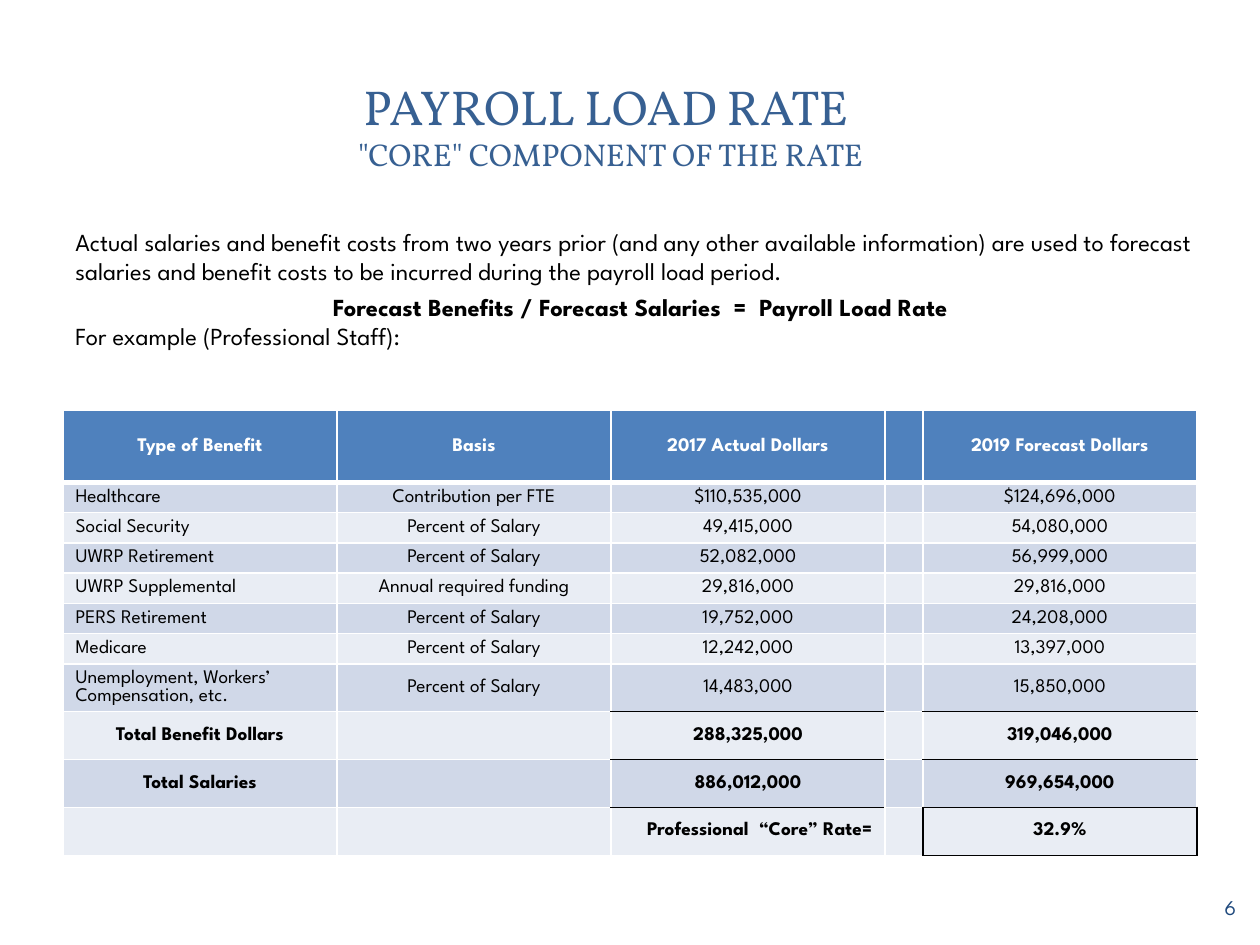
from dataclasses import dataclass

import lxml.etree
import pptx
import pptx.dml.color
import pptx.enum.shapes
import pptx.enum.text
import pptx.oxml.ns
import pptx.util

Align = pptx.enum.text.PP_ALIGN
Anchor = pptx.enum.text.MSO_ANCHOR
Shape = pptx.enum.shapes.MSO_SHAPE

WIDTH, HEIGHT = 10, 7.5
BODY_FONT, TITLE_FONT = "League Spartan", "Vollkorn"
COLORS = {
    "title": "376092", "number": "1F497D", "text": "000000", "white": "FFFFFF",
    "header": "4F81BD", "odd": "D0D8E8", "even": "E9EDF4", "rule": "000000",
}
TABLE_LEFT, TABLE_TOP, TABLE_WIDTH = 0.5, 3.26, 9
GAP_WIDTH = 0.3
HEADER_HEIGHT, ROW_HEIGHT, TALL_HEIGHT = 0.57, 0.24, 0.38
CELL_SIZE = 11
GAP_COLUMN = 3
SIDES = {"lnL": (0, -1), "lnR": (0, 1), "lnT": (-1, 0), "lnB": (1, 0)}


@dataclass
class Panel:
    kind: Shape
    left: float
    top: float
    width: float
    height: float
    opacity: int = 100


@dataclass
class Line:
    text: str
    size: float
    color: str = "text"
    font: str = BODY_FONT
    bold: bool = False
    align: Align = Align.LEFT
    before: float = 0


@dataclass
class Benefit:
    label: str
    basis: str
    actual: str
    forecast: str
    height: float = ROW_HEIGHT
    bold: bool = False

    def texts(self) -> list[str]:
        return [self.label, self.basis, self.actual, "", self.forecast]


PANELS = [
    Panel(Shape.ROUNDED_RECTANGLE, 0.1, 0.11, 9.8, 7.29),
    Panel(Shape.RECTANGLE, 0.3, 0.3, 9.4, 1.45, 83),
    Panel(Shape.RECTANGLE, 0.41, 0.41, 9.17, 1.22),
]
PERCENT = "Percent of Salary"
ROWS = [
    Benefit("Type of Benefit", "Basis", "2017 Actual Dollars", "2019 Forecast Dollars", HEADER_HEIGHT, True),
    Benefit("Healthcare", "Contribution per FTE", "$110,535,000", "$124,696,000"),
    Benefit("Social Security", PERCENT, "49,415,000", "54,080,000"),
    Benefit("UWRP Retirement", PERCENT, "52,082,000", "56,999,000"),
    Benefit("UWRP Supplemental", "Annual required funding", "29,816,000", "29,816,000"),
    Benefit("PERS Retirement", PERCENT, "19,752,000", "24,208,000"),
    Benefit("Medicare", PERCENT, "12,242,000", "13,397,000"),
    Benefit("Unemployment, Workers’ Compensation, etc.", PERCENT, "14,483,000", "15,850,000", TALL_HEIGHT),
    Benefit("Total Benefit Dollars", "", "288,325,000", "319,046,000", TALL_HEIGHT, True),
    Benefit("Total Salaries", "", "886,012,000", "969,654,000", TALL_HEIGHT, True),
    Benefit("", "", "Professional  “Core” Rate=", "32.9%", TALL_HEIGHT, True),
]
LAST_CELL = (len(ROWS) - 1, 4)
RULED_EDGES = {
    frozenset({(row, column), (row + 1, column)}) for row in (7, 8, 9) for column in (2, 4)
} | {
    frozenset({LAST_CELL, (LAST_CELL[0] + down, LAST_CELL[1] + across)})
    for down, across in SIDES.values()
}


def rgb(name: str) -> pptx.dml.color.RGBColor:
    return pptx.dml.color.RGBColor.from_string(COLORS[name])


def add_panel(page, panel: Panel) -> None:
    shape = page.shapes.add_shape(
        panel.kind, *map(pptx.util.Inches, (panel.left, panel.top, panel.width, panel.height)))
    shape.shadow.inherit = False
    shape.line.fill.background()
    shape.fill.solid()
    shape.fill.fore_color.rgb = rgb("white")
    if panel.kind == Shape.ROUNDED_RECTANGLE:
        shape.adjustments[0] = 0.02
    if panel.opacity < 100:
        color = shape._element.spPr.find(".//" + pptx.oxml.ns.qn("a:srgbClr"))
        alpha = lxml.etree.SubElement(color, pptx.oxml.ns.qn("a:alpha"))
        alpha.set("val", str(panel.opacity * 1000))


def write(para, line: Line) -> None:
    para.text = line.text
    para.alignment = line.align
    para.space_before = pptx.util.Pt(line.before)
    for span in para.runs:
        span.font.size = pptx.util.Pt(line.size)
        span.font.name = line.font
        span.font.bold = line.bold
        span.font.color.rgb = rgb(line.color)


def add_text(page, left: float, top: float, width: float, height: float,
             lines: list[Line], anchor: Anchor = Anchor.MIDDLE):
    box = page.shapes.add_textbox(*map(pptx.util.Inches, (left, top, width, height)))
    frame = box.text_frame
    frame.word_wrap = True
    frame.vertical_anchor = anchor
    for index, line in enumerate(lines):
        write(frame.add_paragraph() if index else frame.paragraphs[0], line)
    return box


def set_borders(cell, row: int, column: int) -> None:
    properties = cell._tc.get_or_add_tcPr()
    for index, (side, (down, across)) in enumerate(SIDES.items()):
        neighbour = (row + down, column + across)
        ruled = frozenset({(row, column), neighbour}) in RULED_EDGES
        heavy = {row, neighbour[0]} == {0, 1}
        edge = lxml.etree.Element(pptx.oxml.ns.qn(f"a:{side}"))
        edge.set("w", str(pptx.util.Pt(3 if heavy else 1)))
        fill = lxml.etree.SubElement(edge, pptx.oxml.ns.qn("a:solidFill"))
        color = lxml.etree.SubElement(fill, pptx.oxml.ns.qn("a:srgbClr"))
        color.set("val", COLORS["rule" if ruled else "white"])
        properties.insert(index, edge)


def cell_align(row: int, column: int) -> Align:
    if column == 0 and not ROWS[row].bold:
        return Align.LEFT
    if (row, column) == (LAST_CELL[0], 2):
        return Align.RIGHT
    return Align.CENTER


def fill_cell(cell, row: int, column: int, text: str) -> None:
    background = "header" if row == 0 else "odd" if row % 2 else "even"
    cell.fill.solid()
    cell.fill.fore_color.rgb = rgb(background)
    cell.vertical_anchor = Anchor.MIDDLE
    cell.margin_top = cell.margin_bottom = 0
    para = cell.text_frame.paragraphs[0]
    if text:
        write(para, Line(text, CELL_SIZE, "text" if row else "white",
                         bold=ROWS[row].bold, align=cell_align(row, column)))
    else:
        ending = lxml.etree.SubElement(para._p, pptx.oxml.ns.qn("a:endParaRPr"))
        ending.set("sz", str(CELL_SIZE * 100))
        latin = lxml.etree.SubElement(ending, pptx.oxml.ns.qn("a:latin"))
        latin.set("typeface", BODY_FONT)
    set_borders(cell, row, column)


def add_benefit_table(page) -> None:
    count = len(ROWS[0].texts())
    height = sum(benefit.height for benefit in ROWS)
    table = page.shapes.add_table(
        len(ROWS), count,
        *map(pptx.util.Inches, (TABLE_LEFT, TABLE_TOP, TABLE_WIDTH, height))).table
    for index, column in enumerate(table.columns):
        wide = (TABLE_WIDTH - GAP_WIDTH) / (count - 1)
        column.width = pptx.util.Inches(GAP_WIDTH if index == GAP_COLUMN else wide)
    for row, benefit in enumerate(ROWS):
        table.rows[row].height = pptx.util.Inches(benefit.height)
        for column, text in enumerate(benefit.texts()):
            fill_cell(table.cell(row, column), row, column, text)


def main() -> None:
    deck = pptx.Presentation()
    deck.slide_width, deck.slide_height = pptx.util.Inches(WIDTH), pptx.util.Inches(HEIGHT)
    page = deck.slides.add_slide(deck.slide_layouts[6])
    for panel in PANELS:
        add_panel(page, panel)
    title = add_text(page, 0.33, 0.42, 9.03, 1.14, [
        Line("PAYROLL LOAD RATE \v\"CORE\" COMPONENT OF THE RATE", 28, "title", TITLE_FONT, align=Align.CENTER),
    ])
    title.text_frame.paragraphs[0].runs[1].font.size = pptx.util.Pt(18)
    add_benefit_table(page)
    add_text(page, 0.5, 1.75, 9.17, 1.09, [
        Line("Actual salaries and benefit costs from two years prior (and any other available information) "
             "are used to forecast salaries and benefit costs to be incurred during the payroll load period.", 14),
        Line("Forecast Benefits / Forecast Salaries  =  Payroll Load Rate", 14,
             bold=True, align=Align.CENTER, before=3.6),
        Line("For example (Professional Staff):", 14),
    ], Anchor.TOP)
    add_text(page, 7.58, 7, 2.33, 0.4, [Line("6", 12, "number", align=Align.RIGHT)])
    deck.save("out.pptx")


if __name__ == "__main__":
    main()
